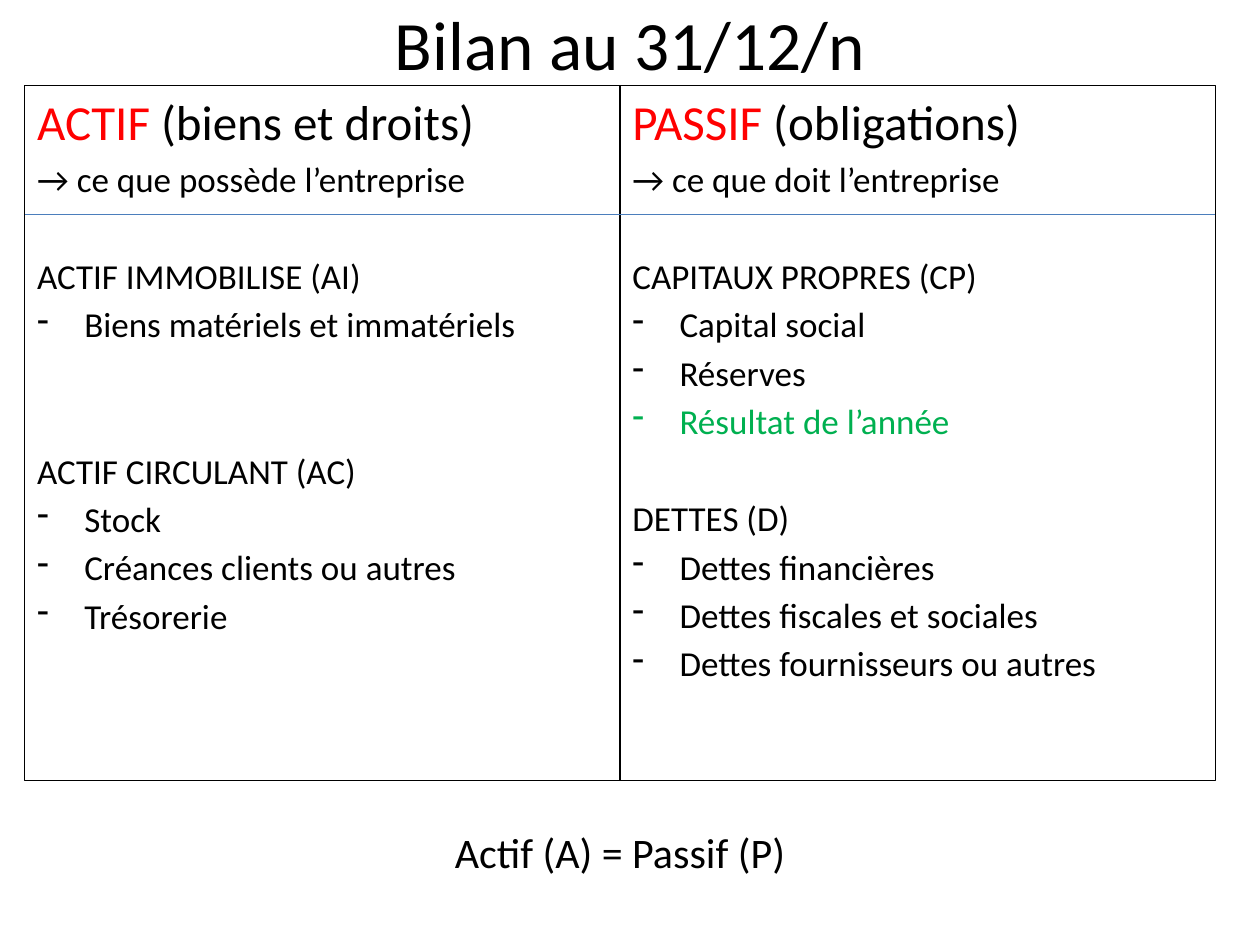
"""Build the balance sheet slide: assets on the left, liabilities on the right."""
import lxml.etree
import pptx
import pptx.dml.color
import pptx.enum.shapes
import pptx.enum.text
import pptx.oxml.ns
import pptx.util

Cm, Pt = pptx.util.Cm, pptx.util.Pt
ALIGN = pptx.enum.text.PP_ALIGN
ANCHOR = pptx.enum.text.MSO_ANCHOR
BLACK, RED, GREEN, BLUE = "000000", "FF0000", "00B050", "4B7EBC"
PANEL_LEFT, PANEL_TOP, PANEL_WIDTH, PANEL_HEIGHT = 0.5, 1.73, 12, 14


def color(hex_string):
    return pptx.dml.color.RGBColor.from_string(hex_string)


def add_text(paragraph, text, size=20, fill=BLACK, font="Calibri"):
    run = paragraph.add_run()
    run.text = text
    run.font.size = Pt(size)
    run.font.name = font
    run.font.color.rgb = color(fill)


def add_child(parent, tag, **attributes):
    return lxml.etree.SubElement(parent, pptx.oxml.ns.qn(tag), **attributes)


class BalanceSlide:
    indent = Cm(0.95)
    spacing = 3.6
    line_pitch = 28
    border = Pt(0.75)

    def __init__(self, presentation):
        self.slide = presentation.slides.add_slide(presentation.slide_layouts[5])

    def title(self, text):
        heading = self.slide.shapes.title
        heading.left, heading.top = Cm(1.27), Cm(0)
        heading.width, heading.height = Cm(22.86), Cm(PANEL_TOP)
        heading.text_frame.vertical_anchor = ANCHOR.MIDDLE
        paragraph = heading.text_frame.paragraphs[0]
        paragraph.alignment = ALIGN.CENTER
        add_text(paragraph, text, size=39.6)

    def entry(self, paragraph, text, skipped_lines=0, bullet=False, **text_format):
        paragraph.alignment = ALIGN.LEFT
        paragraph.space_before = Pt(self.spacing + skipped_lines * self.line_pitch)
        properties = paragraph._p.get_or_add_pPr()
        properties.set("marL", str(self.indent))
        properties.set("indent", str(-self.indent))
        if bullet:
            add_child(properties, "a:buFontTx")
            add_child(properties, "a:buChar", char="-")
        add_text(paragraph, text, **text_format)

    def panel(self, left, name, detail, meaning, sections):
        box = self.slide.shapes.add_shape(
            pptx.enum.shapes.MSO_SHAPE.RECTANGLE,
            Cm(left), Cm(PANEL_TOP), Cm(PANEL_WIDTH), Cm(PANEL_HEIGHT))
        box.shadow.inherit = False
        box.fill.background()
        box.line.color.rgb = color(BLACK)
        box.line.width = self.border
        frame = box.text_frame
        frame.word_wrap = True
        frame.vertical_anchor = ANCHOR.TOP
        heading = frame.paragraphs[0]
        self.entry(heading, name, size=28, fill=RED)
        add_text(heading, detail, size=28)
        self.entry(frame.add_paragraph(), meaning)
        for skipped_lines, section, items in sections:
            self.entry(frame.add_paragraph(), section, skipped_lines)
            for item, fill in items:
                self.entry(frame.add_paragraph(), item, bullet=True, fill=fill)

    def divider(self, left, right, top):
        rule = self.slide.shapes.add_connector(
            pptx.enum.shapes.MSO_CONNECTOR.STRAIGHT,
            Cm(left), Cm(top), Cm(right), Cm(top))
        rule.line.color.rgb = color(BLUE)
        rule.line.width = self.border
        add_child(rule._element.spPr, "a:effectLst")

    def caption(self, text, left, top, width, height):
        box = self.slide.shapes.add_textbox(Cm(left), Cm(top), Cm(width), Cm(height))
        box.text_frame.word_wrap = True
        paragraph = box.text_frame.paragraphs[0]
        paragraph.alignment = ALIGN.CENTER
        add_text(paragraph, text, size=24)


def main():
    presentation = pptx.Presentation()
    presentation.slide_width, presentation.slide_height = Cm(25.4), Cm(19.05)
    balance = BalanceSlide(presentation)
    balance.title("Bilan au 31/12/n")
    balance.panel(
        PANEL_LEFT, "ACTIF", " (biens et droits)", "→ ce que possède l’entreprise",
        [(1, "ACTIF IMMOBILISE (AI)", [("Biens matériels et immatériels", BLACK)]),
         (2, "ACTIF CIRCULANT (AC)", [("Stock", BLACK),
                                      ("Créances clients ou autres", BLACK),
                                      ("Trésorerie", BLACK)])])
    balance.panel(
        PANEL_LEFT + PANEL_WIDTH, "PASSIF", " (obligations)", "→ ce que doit l’entreprise",
        [(1, "CAPITAUX PROPRES (CP)", [("Capital social", BLACK),
                                       ("Réserves", BLACK),
                                       ("Résultat de l’année", GREEN)]),
         (1, "DETTES (D)", [("Dettes financières", BLACK),
                            ("Dettes fiscales et sociales", BLACK),
                            ("Dettes fournisseurs ou autres", BLACK)])])
    balance.divider(PANEL_LEFT, PANEL_LEFT + 2 * PANEL_WIDTH, 4.32)
    balance.caption("Actif (A) = Passif (P)", 7.9, 16.54, 9.2, 1.27)
    presentation.save("out.pptx")


if __name__ == "__main__":
    main()
